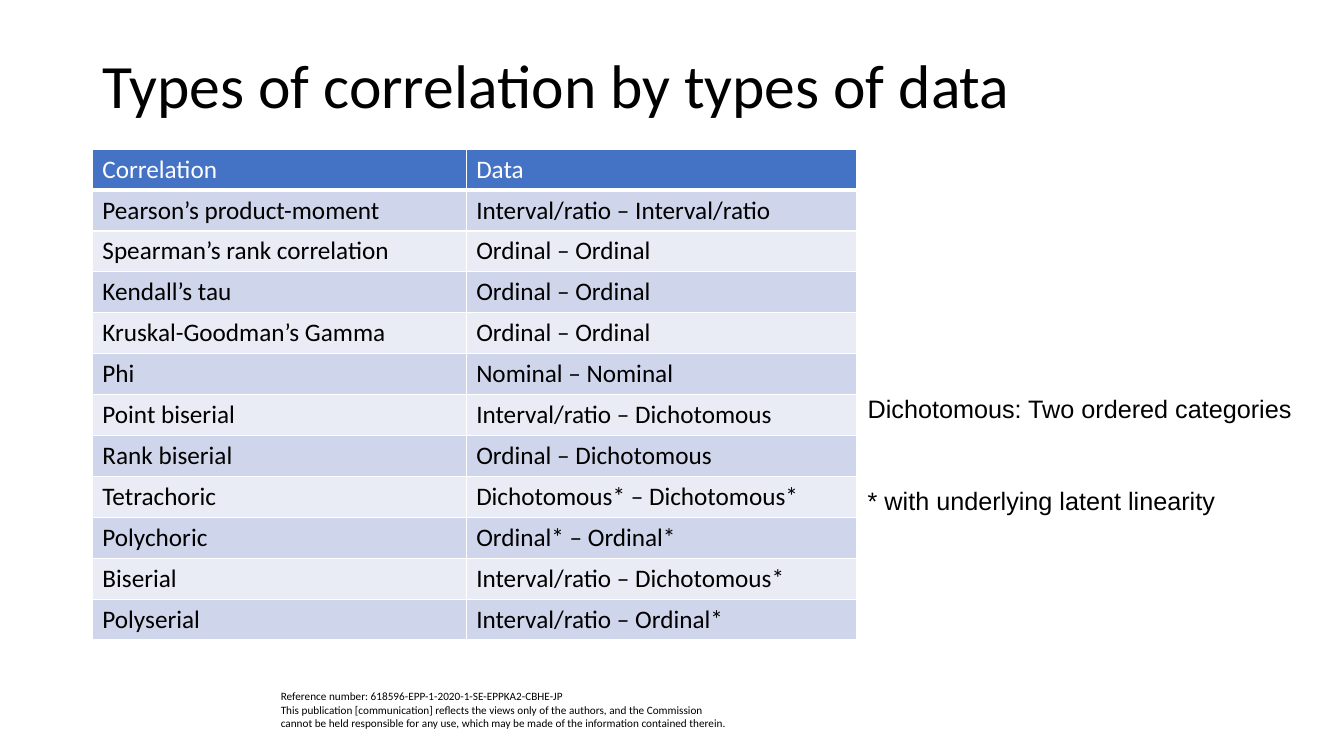
from lxml import etree
from pptx import Presentation
from pptx import util as u
from pptx.dml.color import RGBColor
from pptx.enum import text
from pptx.oxml.ns import qn

PX = 9525
COLORS = {
    "ink": "000000",
    "paper": "FFFFFF",
    "header": "4472C4",
    "odd": "CFD5EA",
    "even": "E9EBF5",
}
CORRELATIONS = [
    ("Correlation", "Data"),
    ("Pearson’s product-moment", "Interval/ratio – Interval/ratio"),
    ("Spearman’s rank correlation", "Ordinal – Ordinal"),
    ("Kendall’s tau", "Ordinal – Ordinal"),
    ("Kruskal-Goodman’s Gamma", "Ordinal – Ordinal"),
    ("Phi", "Nominal – Nominal"),
    ("Point biserial", "Interval/ratio – Dichotomous"),
    ("Rank biserial", "Ordinal – Dichotomous"),
    ("Tetrachoric", "Dichotomous* – Dichotomous*"),
    ("Polychoric", "Ordinal* – Ordinal*"),
    ("Biserial", "Interval/ratio – Dichotomous*"),
    ("Polyserial", "Interval/ratio – Ordinal*"),
]
COLUMN_WIDTHS = (356, 372)
ROW_HEIGHT = 39


def px(*lengths):
    """Turn pixel lengths into EMU."""
    return [u.Emu(length * PX) for length in lengths]


def add_words(paragraph, words, size, font="Calibri", color="ink"):
    """Add one styled run to a paragraph."""
    run = paragraph.add_run()
    run.text = words
    run.font.size = u.Pt(size)
    run.font.name = font
    run.font.color.rgb = RGBColor.from_string(COLORS[color])


def add_frame(slide, box, wrap=True):
    """Add a text box and return its text frame."""
    frame = slide.shapes.add_textbox(*px(*box)).text_frame
    frame.word_wrap = wrap
    return frame


def add_title(slide, words):
    """Add the slide heading."""
    frame = add_frame(slide, (88, 38, 1104, 92))
    frame.vertical_anchor = text.MSO_ANCHOR.MIDDLE
    heading = frame.paragraphs[0]
    heading.line_spacing = 0.9
    add_words(heading, words, 44)


def add_notice(slide, reference, disclaimer):
    """Add the small print at the foot of the slide."""
    notice = add_frame(slide, (258, 652, 445, 48)).paragraphs[0]
    add_words(notice, reference, 8)
    notice.add_line_break()
    add_words(notice, disclaimer, 8)


def add_remarks(slide, definition, footnote):
    """Add the two remarks beside the table."""
    frame = add_frame(slide, (817, 370, 427, 126), wrap=False)
    add_words(frame.paragraphs[0], definition, 18, "Arial")
    footnote_line = frame.add_paragraph()
    footnote_line.space_before = u.Pt(44)
    add_words(footnote_line, footnote, 18, "Arial")


def set_borders(cell, bottom):
    """Rule a cell in white, with the bottom width given in points."""
    properties = cell._tc.get_or_add_tcPr()
    widths = {"a:lnL": 1, "a:lnR": 1, "a:lnT": 1, "a:lnB": bottom}
    for position, (side, width) in enumerate(widths.items()):
        line = etree.Element(qn(side), w=str(u.Pt(width)))
        fill = etree.SubElement(line, qn("a:solidFill"))
        etree.SubElement(fill, qn("a:srgbClr"), val=COLORS["paper"])
        properties.insert(position, line)


def add_correlations(slide, rows):
    """Add the banded table of correlations and data types."""
    box = px(88, 142, sum(COLUMN_WIDTHS), ROW_HEIGHT * len(rows))
    table = slide.shapes.add_table(len(rows), len(COLUMN_WIDTHS), *box).table
    for column, width in zip(table.columns, px(*COLUMN_WIDTHS)):
        column.width = width
    for number, entries in enumerate(rows):
        is_header = number == 0
        band = "header" if is_header else "odd" if number % 2 else "even"
        for cell, words in zip(table.rows[number].cells, entries):
            cell.fill.solid()
            cell.fill.fore_color.rgb = RGBColor.from_string(COLORS[band])
            set_borders(cell, 3 if is_header else 1)
            paragraph = cell.text_frame.paragraphs[0]
            paragraph.font.bold = False
            add_words(paragraph, words, 18, color="paper" if is_header else "ink")
            paragraph.runs[0].font.bold = False


def main():
    """Build and save the slide."""
    deck = Presentation()
    deck.slide_width, deck.slide_height = px(1280, 720)
    slide = deck.slides.add_slide(deck.slide_layouts[6])
    add_notice(
        slide,
        "Reference number: 618596-EPP-1-2020-1-SE-EPPKA2-CBHE-JP",
        "This publication [communication] reflects the views only of the authors, "
        "and the Commission cannot be held responsible for any use, "
        "which may be made of the information contained therein.",
    )
    add_title(slide, "Types of correlation by types of data")
    add_correlations(slide, CORRELATIONS)
    add_remarks(
        slide,
        "Dichotomous: Two ordered categories",
        "* with underlying latent linearity",
    )
    deck.save("out.pptx")


if __name__ == "__main__":
    main()
